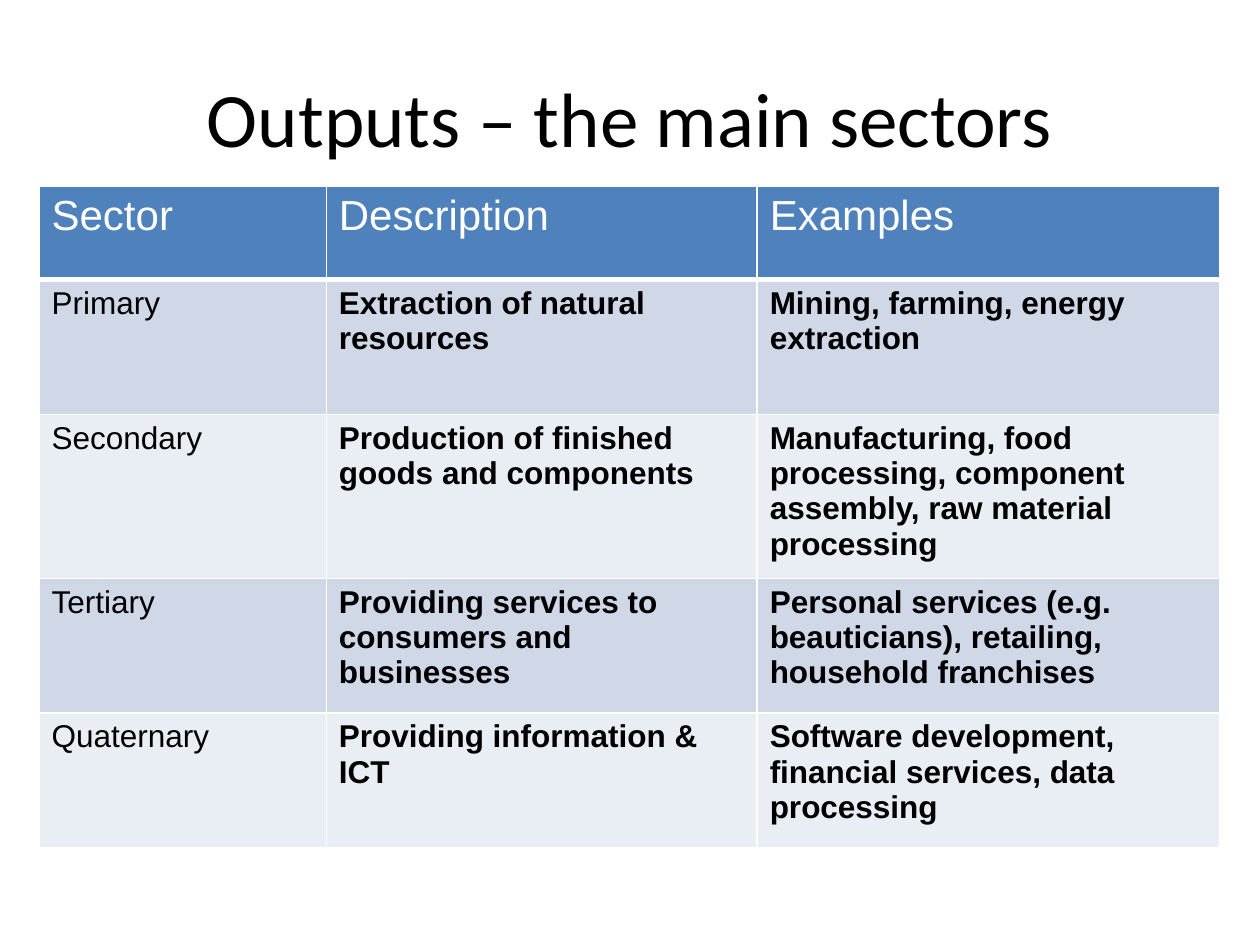
"""Build a slide with a title and a table of the main output sectors."""
import pptx
import pptx.dml.color
import pptx.enum.text
import pptx.oxml
import pptx.oxml.ns
import pptx.util

COLORS = {"text": "000000", "white": "FFFFFF", "header": "4F81BD",
          "odd": "D0D8E8", "even": "E9EDF4"}
COLS, ROWS = 100, 75
SECTORS = [
    ("Sector", "Description", "Examples"),
    ("Primary", "Extraction of natural resources",
     "Mining, farming, energy extraction"),
    ("Secondary", "Production of finished goods and components",
     "Manufacturing, food processing, component assembly, raw material processing"),
    ("Tertiary", "Providing services to consumers and businesses",
     "Personal services (e.g. beauticians), retailing, household franchises"),
    ("Quaternary", "Providing information & ICT",
     "Software development, financial services, data processing"),
]


def rgb(name):
    return pptx.dml.color.RGBColor.from_string(COLORS[name])


def write(tf, text, size=18, font="Arial", color="text", bold=False, align="LEFT"):
    p = tf.paragraphs[0]
    p.alignment = getattr(pptx.enum.text.PP_ALIGN, align)
    r = p.add_run()
    r.text = text
    r.font.size = pptx.util.Pt(size)
    r.font.name = font
    r.font.bold = bold
    r.font.color.rgb = rgb(color)


class Deck:
    def __init__(self):
        self.prs = pptx.Presentation()
        self.prs.slide_width = pptx.util.Inches(10)
        self.prs.slide_height = pptx.util.Inches(7.5)
        self.s = self.prs.slides.add_slide(self.prs.slide_layouts[6])

    def x(self, cols):
        return int(self.prs.slide_width * cols / COLS)

    def y(self, rows):
        return int(self.prs.slide_height * rows / ROWS)

    def title(self, text, left, top, width, height):
        sp = self.s.shapes.add_textbox(self.x(left), self.y(top),
                                       self.x(width), self.y(height))
        tf = sp.text_frame
        tf.word_wrap = True
        tf.vertical_anchor = pptx.enum.text.MSO_ANCHOR.MIDDLE
        write(tf, text, size=44, font="Calibri", align="CENTER")

    def borders(self, cell, **widths):
        tcPr = cell._tc.get_or_add_tcPr()
        for i, (side, width) in enumerate(widths.items()):
            tcPr.insert(i, pptx.oxml.parse_xml(
                f'<a:ln{side} {pptx.oxml.ns.nsdecls("a")} w="{pptx.util.Pt(width)}">'
                f'<a:solidFill><a:srgbClr val="{COLORS["white"]}"/></a:solidFill>'
                f'</a:ln{side}>'))

    def table(self, data, left, top, widths, heights):
        tbl = self.s.shapes.add_table(
            len(data), len(widths), self.x(left), self.y(top),
            self.x(sum(widths)), self.y(sum(heights))).table
        for col, width in zip(tbl.columns, widths):
            col.width = self.x(width)
        for i, (row, height) in enumerate(zip(data, heights)):
            tbl.rows[i].height = self.y(height)
            fill = "header" if i == 0 else "odd" if i % 2 else "even"
            for j, text in enumerate(row):
                cell = tbl.cell(i, j)
                cell.fill.solid()
                cell.fill.fore_color.rgb = rgb(fill)
                self.borders(cell, L=1, R=1, T=3 if i == 1 else 1,
                             B=3 if i == 0 else 1)
                if i == 0:
                    write(cell.text_frame, text, size=24, color="white")
                else:
                    write(cell.text_frame, text, bold=j > 0)


def main():
    deck = Deck()
    deck.title("Outputs – the main sectors", 5, 3, 90, 12.5)
    deck.table(SECTORS, 3.1, 14.8, [22.8, 34.2, 36.7], [7.4] + [10.7] * 4)
    deck.prs.save("out.pptx")


if __name__ == "__main__":
    main()
